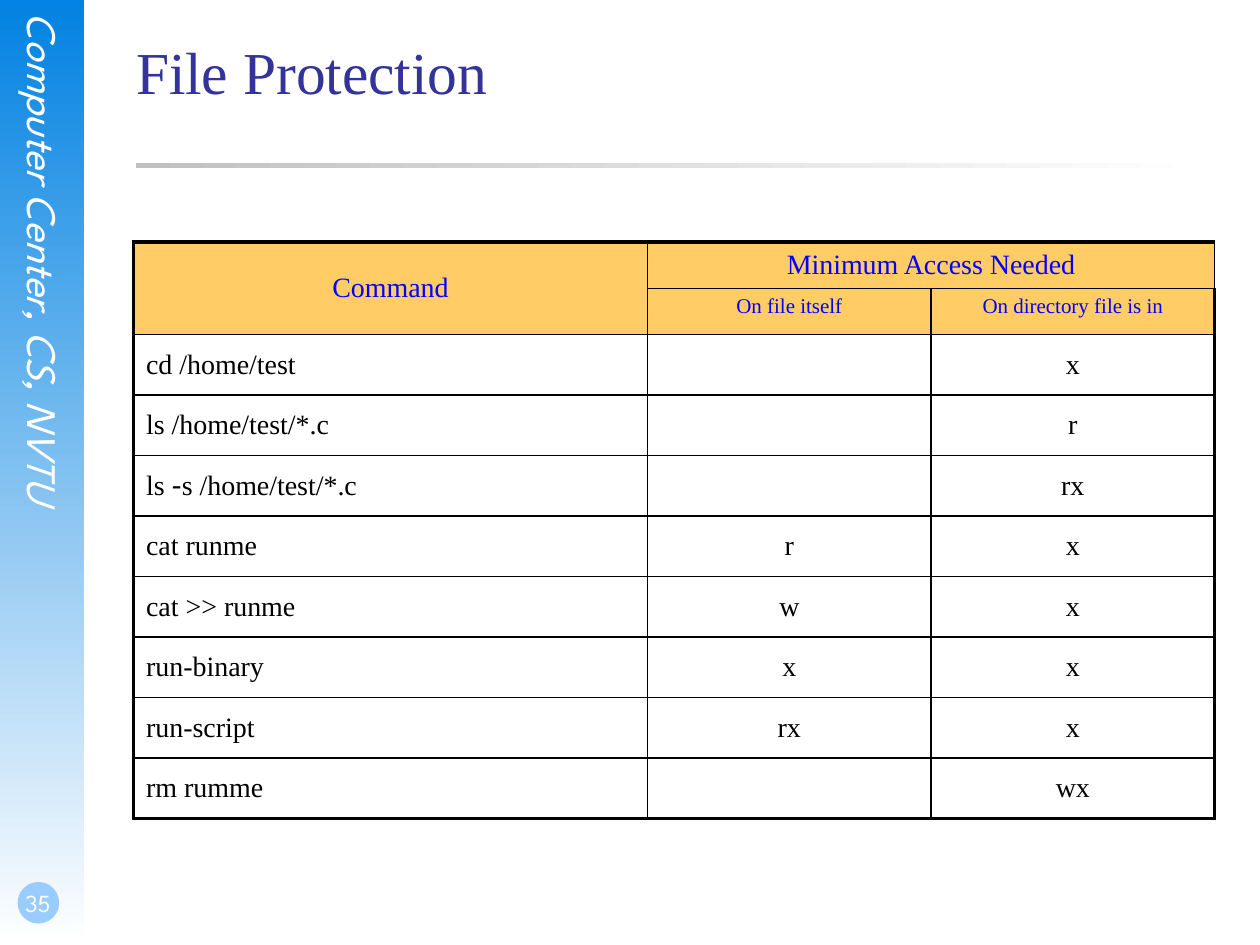
from lxml.etree import SubElement
from pptx import Presentation
from pptx.dml.color import RGBColor
from pptx.enum.shapes import MSO_SHAPE
from pptx.enum.text import MSO_ANCHOR, PP_ALIGN
from pptx.oxml.ns import qn
from pptx.util import Inches, Pt

SERIF, SANS, SYMBOL = "Times New Roman", "League Spartan", "DejaVu Sans"
BLACK, BLUE, WHITE, HEADER_FILL = "000000", "0000FF", "FFFFFF", "FFCC66"
SIDEBAR_TEXT = "Computer Center, CS, NVTU"
HEADERS = [
    ["Command", "Minimum Access Needed", ""],
    ["", "On file itself", "On directory file is in"],
]
COMMANDS = [
    ("cd /home/test", "", "x"),
    ("ls /home/test/*.c", "", "r"),
    (("ls ", "-", "s /home/test/*.c"), "", "rx"),
    ("cat runme", "r", "x"),
    ("cat >> runme", "w", "x"),
    ("run-binary", "x", "x"),
    ("run-script", "rx", "x"),
    ("rm rumme", "", "wx"),
]
COLUMN_WIDTHS = [4.08, 2.25, 2.25]
ROW_HEIGHTS = [0.37, 0.35] + [0.48] * len(COMMANDS)


def color(value):
    """Turn a hex string into a colour."""
    return RGBColor.from_string(value)


def add_run(paragraph, text, size, font, hex_color, italic=None):
    """Add one formatted run."""
    run = paragraph.add_run()
    run.text = text
    run.font.size = Pt(size)
    run.font.name = font
    run.font.italic = italic
    run.font.color.rgb = color(hex_color)


def add_panel(slide, kind, box, colors, angle=0):
    """Add an unlined shape with a solid or gradient fill."""
    shape = slide.shapes.add_shape(kind, *map(Inches, box))
    shape.shadow.inherit = False
    shape.line.fill.background()
    if len(colors) == 1:
        shape.fill.solid()
        shape.fill.fore_color.rgb = color(colors[0])
        return
    shape.fill.gradient()
    shape.fill.gradient_angle = angle
    for stop, value in zip(shape.fill.gradient_stops, colors):
        stop.color.rgb = color(value)


def add_text(slide, box, text, size, font, hex_color, italic=None, margins=(0, 0, 0, 0)):
    """Add a wrapped one-line text box and return its frame."""
    frame = slide.shapes.add_textbox(*map(Inches, box)).text_frame
    frame.word_wrap = True
    frame.margin_left, frame.margin_top, frame.margin_right, frame.margin_bottom = map(Inches, margins)
    add_run(frame.paragraphs[0], text, size, font, hex_color, italic)
    return frame


def set_borders(cell, row, column):
    """Draw thick lines on the table's outside and thin lines inside."""
    outside = {
        "a:lnL": column == 0,
        "a:lnR": column == len(COLUMN_WIDTHS) - 1,
        "a:lnT": row == 0,
        "a:lnB": row == len(ROW_HEIGHTS) - 1,
    }
    properties = cell._tc.get_or_add_tcPr()
    for position, (tag, thick) in enumerate(outside.items()):
        line = SubElement(properties, qn(tag), w=str(Pt(2.25 if thick else 1)))
        fill = SubElement(line, qn("a:solidFill"))
        SubElement(fill, qn("a:srgbClr"), val=BLACK)
        properties.insert(position, line)


def fill_cell(cell, content, row, column):
    """Write and format one table cell."""
    is_header = row < len(HEADERS)
    if is_header:
        cell.fill.solid()
        cell.fill.fore_color.rgb = color(HEADER_FILL)
    else:
        cell.fill.background()
    set_borders(cell, row, column)
    cell.vertical_anchor = MSO_ANCHOR.TOP if row == 1 else MSO_ANCHOR.MIDDLE
    size = 12 if row == 1 else 16
    paragraph = cell.text_frame.paragraphs[0]
    paragraph.font.size = Pt(size)
    paragraph.space_before = Pt(size / 4)
    paragraph.alignment = PP_ALIGN.CENTER if is_header or column else PP_ALIGN.LEFT
    for part in [content] if isinstance(content, str) else content:
        if part:
            font = SYMBOL if part == "-" else SERIF
            add_run(paragraph, part, size, font, BLUE if is_header else BLACK)


def add_access_table(slide):
    """Add the table of commands and the access they need."""
    rows = HEADERS + COMMANDS
    box = (1.06, 1.92, sum(COLUMN_WIDTHS), sum(ROW_HEIGHTS))
    table = slide.shapes.add_table(len(rows), len(COLUMN_WIDTHS), *map(Inches, box)).table
    table.first_row = table.horz_banding = False
    for column, width in zip(table.columns, COLUMN_WIDTHS):
        column.width = Inches(width)
    for row, height in zip(table.rows, ROW_HEIGHTS):
        row.height = Inches(height)
    for row, contents in enumerate(rows):
        for column, content in enumerate(contents):
            fill_cell(table.cell(row, column), content, row, column)
    table.cell(0, 0).merge(table.cell(1, 0))
    table.cell(0, 1).merge(table.cell(0, 2))


def main():
    """Build the file protection slide."""
    presentation = Presentation()
    presentation.slide_width, presentation.slide_height = Inches(10), Inches(7.5)
    slide = presentation.slides.add_slide(presentation.slide_layouts[6])

    add_panel(slide, MSO_SHAPE.RECTANGLE, (0, 0, 0.67, 7.5), ["0282E2", WHITE], 270)
    sidebar = add_text(slide, (0.15, 0.1, 0.4, 5.11), SIDEBAR_TEXT, 24, SANS, WHITE, True)
    sidebar._txBody.bodyPr.set("vert", "eaVert")

    add_panel(slide, MSO_SHAPE.OVAL, (0.14, 7, 0.33, 0.33), ["99CCFF"])
    number = add_text(slide, (0, 6.83, 0.58, 0.5), "35", 14, SANS, WHITE, margins=(0.02, 0, 0, 0.05))
    number.vertical_anchor = MSO_ANCHOR.BOTTOM
    number.paragraphs[0].alignment = PP_ALIGN.CENTER

    add_panel(slide, MSO_SHAPE.RECTANGLE, (1.08, 1.29, 8.5, 0.04), ["C0C0C0", WHITE])
    add_text(slide, (1.08, 0.28, 8.5, 1.25), "File Protection", 34, SERIF, "333399")
    add_access_table(slide)
    presentation.save("out.pptx")


if __name__ == "__main__":
    main()
